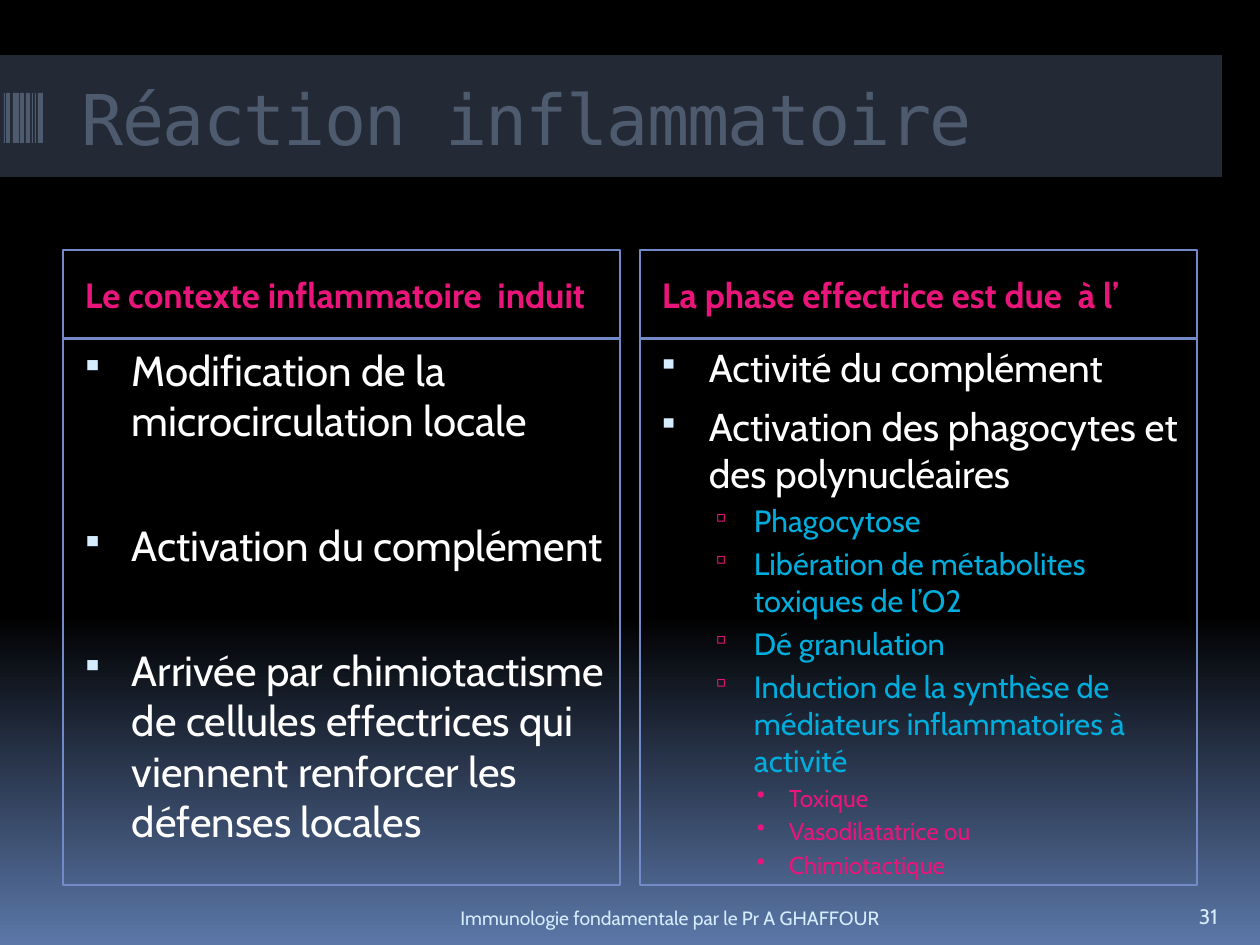
from copy import deepcopy

from lxml import etree
from pptx import Presentation
from pptx import util as u
from pptx.dml.color import RGBColor
from pptx.enum import shapes, text
from pptx.oxml.ns import qn

SCALE = 914400 / 126
BODY_FONT = "Cabin"
TITLE_FONT = "DejaVu Sans Mono"
WHITE, PALE, SLATE = "FFFFFF", "D6ECFF", "4E5B6F"
PINK, CYAN, BORDER = "EA157A", "00ADDC", "738AC8"

BARS = [(4, 1), (6, 4), (13, 6), (20, 4), (26, 4), (32, 1), (35, 1), (38, 5)]

MAIN = dict(bullet="▪", bullet_color=PALE, percent=75, margin=57, hang=51, color=WHITE)
SUB = dict(bullet="▫", bullet_color=PINK, percent=75, margin=102, hang=43,
           color=CYAN, size=17.6, before=3.4)
DETAIL = dict(bullet="•", bullet_color=PINK, percent=100, margin=137, hang=32,
              color=PINK, size=13.9, before=2.5)
SPACED = dict(MAIN, size=24, before=42.6)
CLOSE = dict(MAIN, size=22.2, before=7)

LEFT_ITEMS = [
    (SPACED, "Modification de la microcirculation locale"),
    (SPACED, "Activation du complément"),
    (SPACED, "Arrivée par chimiotactisme de cellules effectrices qui viennent "
             "renforcer les défenses locales"),
]
RIGHT_ITEMS = [
    (CLOSE, "Activité du complément"),
    (CLOSE, "Activation des phagocytes et des polynucléaires"),
    (SUB, "Phagocytose"),
    (SUB, "Libération de métabolites toxiques de l’O2"),
    (SUB, "Dé granulation"),
    (SUB, "Induction de la synthèse de médiateurs inflammatoires à activité"),
    (DETAIL, "Toxique"),
    (DETAIL, "Vasodilatatrice ou"),
    (DETAIL, "Chimiotactique"),
]


def px(length):
    return u.Emu(round(length * SCALE))


def color(value):
    return RGBColor.from_string(value)


def add_element(parent, tag, **attributes):
    return etree.SubElement(parent, qn(tag), attributes)


def add_rectangle(page, left, top, width, height, fill=None, line=None):
    box = page.shapes.add_shape(shapes.MSO_SHAPE.RECTANGLE,
                                px(left), px(top), px(width), px(height))
    box.shadow.inherit = False
    if fill:
        box.fill.solid()
        box.fill.fore_color.rgb = color(fill)
    else:
        box.fill.background()
    if line:
        box.line.color.rgb = color(line)
        box.line.width = u.Pt(0.75)
    else:
        box.line.fill.background()
    return box


def set_frame(box, anchor, top_inset=6):
    frame = box.text_frame
    frame.word_wrap = True
    frame.vertical_anchor = anchor
    frame.margin_left = frame.margin_right = px(12)
    frame.margin_top, frame.margin_bottom = px(top_inset), px(6)
    return frame


def write(para, words, size, shade, font=BODY_FONT, bold=False, align=text.PP_ALIGN.LEFT):
    para.text = words
    para.alignment = align
    for span in para.runs:
        span.font.size = u.Pt(size)
        span.font.name = font
        span.font.bold = bold
        span.font.color.rgb = color(shade)


def add_label(page, left, top, width, height, anchor, words, size, shade,
              top_inset=6, **style):
    box = page.shapes.add_textbox(px(left), px(top), px(width), px(height))
    para = set_frame(box, anchor, top_inset).paragraphs[0]
    write(para, words, size, shade, **style)
    return para


def set_indent(para, margin, hang=0):
    properties = para._p.get_or_add_pPr()
    properties.set("marL", str(px(margin)))
    properties.set("indent", str(-px(hang)))
    return properties


def add_bullet(para, style):
    properties = set_indent(para, style["margin"], style["hang"])
    tint = add_element(properties, "a:buClr")
    add_element(tint, "a:srgbClr", val=style["bullet_color"])
    add_element(properties, "a:buSzPct", val=str(style["percent"] * 1000))
    add_element(properties, "a:buChar", char=style["bullet"])


def paint_background(page):
    fill = page.background.fill
    fill.gradient()
    fill.gradient_angle = 270
    stop_list = page._element.find(".//" + qn("a:gsLst"))
    stop_list.append(deepcopy(stop_list[0]))
    stops = [(0, "000000"), (0.65, "000000"), (1, "5B77A8")]
    for stop, (position, shade) in zip(fill.gradient_stops, stops):
        stop.position = position
        stop.color.rgb = color(shade)


def add_title_band(page, left, top, width, height, title):
    band = add_rectangle(page, left, top, width, height, fill="586A86")
    tint = band._element.spPr.find(".//" + qn("a:srgbClr"))
    add_element(tint, "a:alpha", val="40000")
    for offset, thickness in BARS:
        add_rectangle(page, left + offset, top + 38, thickness, 50, fill=SLATE)
    para = add_label(page, left + 70, top + 15, 1071, 126, text.MSO_ANCHOR.TOP,
                     title, 40, SLATE, top_inset=6, font=TITLE_FONT)
    para.runs[0].font._element.set("spc", "-100")


def add_column(page, left, top, width, height, heading, items):
    header_height = 89
    header = add_rectangle(page, left, top, width, header_height - 1, line=BORDER)
    para = set_frame(header, text.MSO_ANCHOR.MIDDLE).paragraphs[0]
    write(para, heading, 20, PINK, bold=True)
    set_indent(para, 10)

    body = add_rectangle(page, left, top + header_height, width,
                         height - header_height, line=BORDER)
    frame = set_frame(body, text.MSO_ANCHOR.TOP, top_inset=5)
    for index, (style, words) in enumerate(items):
        para = frame.add_paragraph() if index else frame.paragraphs[0]
        write(para, words, style["size"], style["color"])
        add_bullet(para, style)
        para.space_before = u.Pt(style["before"] if index else 0)


def add_footer(page, left, top, width, height, words, number):
    add_label(page, left, top, 766, height, text.MSO_ANCHOR.BOTTOM,
              words, 11, PALE, align=text.PP_ALIGN.RIGHT)
    add_label(page, left + width - 63, top, 63, height, text.MSO_ANCHOR.BOTTOM,
              number, 12, PALE)


def main():
    deck = Presentation()
    deck.slide_width, deck.slide_height = px(1260), px(945)
    page = deck.slides.add_slide(deck.slide_layouts[6])
    paint_background(page)
    add_title_band(page, 0, 55, 1222, 122, "Réaction inflammatoire")
    columns = [("Le contexte inflammatoire  induit", LEFT_ITEMS),
               ("La phase effectrice est due  à l’", RIGHT_ITEMS)]
    for index, (heading, items) in enumerate(columns):
        add_column(page, 63 + index * 577, 250, 557, 635, heading, items)
    add_footer(page, 126, 885, 1124, 50,
               "Immunologie fondamentale par le Pr A GHAFFOUR", "31")
    deck.save("out.pptx")


if __name__ == "__main__":
    main()
